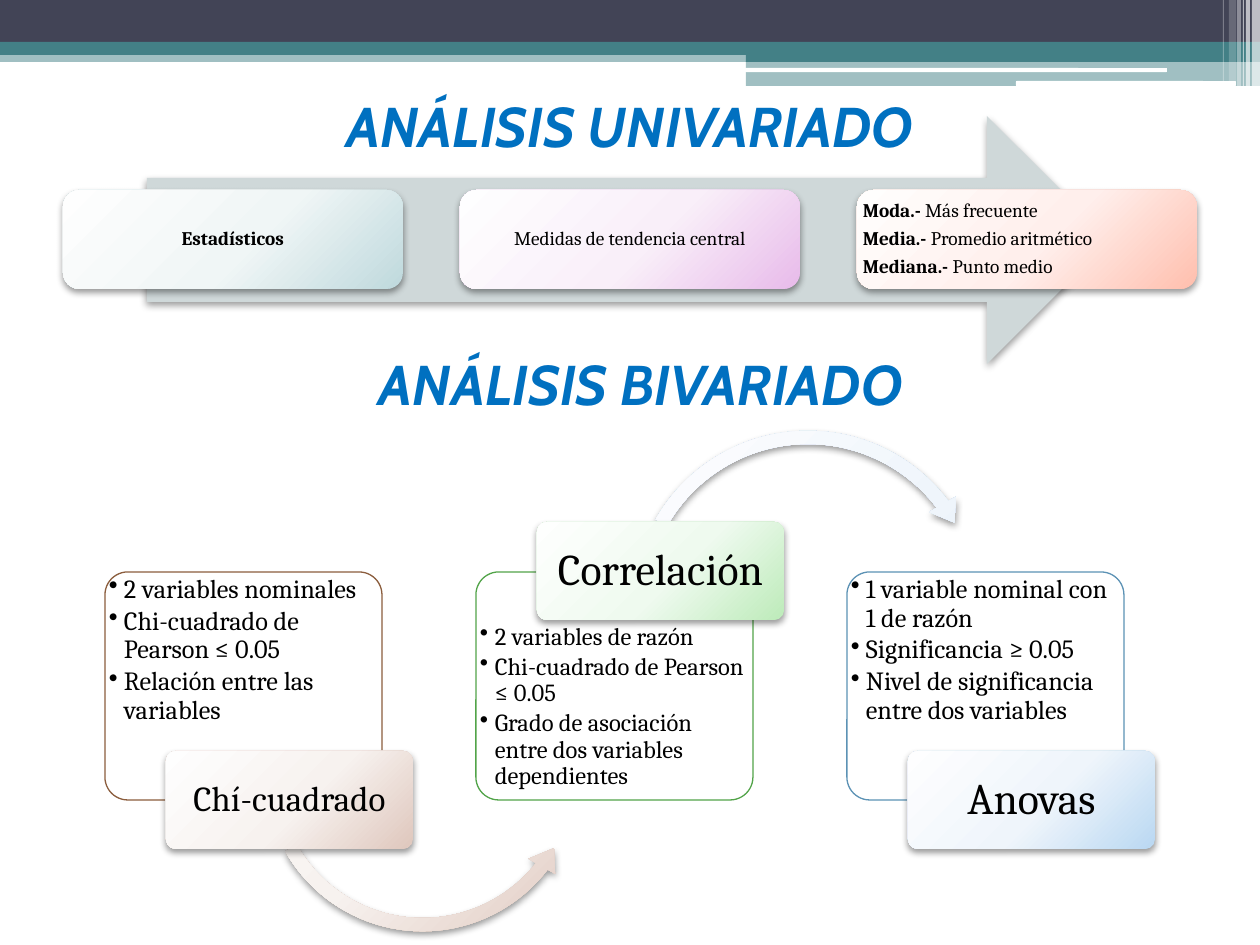
from lxml.etree import SubElement
from pptx import Presentation
from pptx.dml.color import RGBColor
from pptx.enum.shapes import MSO_SHAPE
from pptx.enum.text import MSO_ANCHOR, PP_ALIGN
from pptx.oxml import parse_xml
from pptx.oxml.ns import nsdecls, qn
from pptx.util import Inches, Pt

PX = 7257
HEX = {
    "white": "FFFFFF", "black": "000000", "navy": "424456", "teal": "438086",
    "blue": "0070C0", "grey": "CFD8D9",
    "brown": "8B5D3D", "green": "52A449", "steel": "5C92B5",
}
FADE = {
    "aqua": ("FEFEFE", "F0F6F6", "BFD9DD"),
    "pink": ("FEFEFF", "F9EFF9", "E8BBEA"),
    "coral": ("FFFEFD", "FFEFEC", "FFBFAE"),
    "brown": ("FEFEFE", "F7F2EF", "DFC7BD"),
    "green": ("FEFFFE", "EFFAEF", "BDEBBA"),
    "steel": ("FEFEFF", "EFF5FB", "BAD8F2"),
}


def draw(kind, area, fill, alpha=100, fade=False, shade=False):
    shape = slide.shapes.add_shape(kind, *[v * PX for v in area])
    shape.line.fill.background()
    shape.shadow.inherit = False
    props = shape._element.spPr
    if fade:
        shape.fill.background()
        stops = "".join(
            f'<a:gs pos="{pos}"><a:srgbClr val="{tint}"/></a:gs>'
            for pos, tint in zip((0, 55000, 100000), FADE[fill]))
        props.replace(props.find(qn("a:noFill")), parse_xml(
            f'<a:gradFill {nsdecls("a")} rotWithShape="1"><a:gsLst>{stops}</a:gsLst>'
            '<a:path path="circle"><a:fillToRect l="-40000" t="-90000" '
            'r="140000" b="190000"/></a:path></a:gradFill>'))
    else:
        shape.fill.solid()
        shape.fill.fore_color.rgb = RGBColor.from_string(HEX[fill])
        if alpha < 100:
            tint = props.find(qn("a:solidFill"))[0]
            SubElement(tint, qn("a:alpha"), val=str(alpha * 1000))
    if shade:
        props.find(qn("a:effectLst")).append(parse_xml(
            f'<a:outerShdw {nsdecls("a")} blurRad="52000" dist="25400" '
            'dir="5400000" rotWithShape="0"><a:srgbClr val="000000">'
            '<a:alpha val="40000"/></a:srgbClr></a:outerShdw>'))
    return shape


def write(shape, paras, size, align, after, pad, anchor=MSO_ANCHOR.MIDDLE,
          font="Cambria", ink="black", slant=None, space=0.9):
    frame = shape.text_frame
    frame.word_wrap = True
    frame.vertical_anchor = anchor
    frame.margin_left = frame.margin_right = pad[0] * PX
    frame.margin_top = frame.margin_bottom = pad[1] * PX
    for i, runs in enumerate(paras):
        para = frame.add_paragraph() if i else frame.paragraphs[0]
        para.alignment = align
        para.line_spacing = space
        para.space_before = Pt(0)
        para.space_after = Pt(after)
        for text, bold in runs:
            run = para.add_run()
            run.text = text
            run.font.name = font
            run.font.size = Pt(size)
            run.font.bold = bold
            run.font.italic = slant
            run.font.color.rgb = RGBColor.from_string(HEX[ink])
    return frame


deck = Presentation()
deck.slide_width, deck.slide_height = Inches(10), Inches(7.5)
slide = deck.slides.add_slide(deck.slide_layouts[5])

bands = [
    ((0, 50, 1260, 12), "teal", 50),
    ((0, 0, 1260, 43), "navy", 100),
    ((0, 42, 1260, 13), "teal", 100),
    ((746, 49, 514, 13), "teal", 100),
    ((746, 61, 514, 25), "teal", 50),
]
for area, tint, alpha in bands:
    draw(MSO_SHAPE.RECTANGLE, area, tint, alpha)
for area in ((745, 68, 422, 4), (1016, 81, 220, 5)):
    draw(MSO_SHAPE.ROUNDED_RECTANGLE, area, "white")
stripes = [(1252, 8, 86, 65), (1246, 4, 86, 65), (1243, 1, 86, 60),
           (1237, 4, 86, 40), (1229, 7, 81, 20), (1223, 1, 81, 30)]
for x, w, h, alpha in stripes:
    draw(MSO_SHAPE.RECTANGLE, (x, 0, w, h), "white", alpha)

title = slide.shapes.title
title.left, title.top, title.width, title.height = [
    v * PX for v in (63, 77, 1134, 97)]
lower = slide.shapes.add_textbox(*[v * PX for v in (74, 344, 1134, 128)])
heads = [(title, "ANÁLISIS UNIVARIADO", MSO_ANCHOR.MIDDLE),
         (lower, "ANÁLISIS BIVARIADO", MSO_ANCHOR.TOP)]
for shape, text, anchor in heads:
    write(shape, [[(text, True)]], 32, PP_ALIGN.CENTER, 0, (13, 6), anchor,
          "Cabin", "blue", True, 1.0)

draw(MSO_SHAPE.RIGHT_ARROW, (147, 116, 964, 248), "grey", shade=True)
cards = [
    ("aqua", PP_ALIGN.CENTER, [[("Estadísticos", True)]]),
    ("pink", PP_ALIGN.CENTER, [[("Medidas de tendencia central", False)]]),
    ("coral", PP_ALIGN.JUSTIFY, [
        [("Moda.- ", True), ("Más frecuente", False)],
        [("Media.- ", True), ("Promedio aritmético", False)],
        [("Mediana.- ", True), ("Punto medio", False)],
    ]),
]
for i, (tint, align, paras) in enumerate(cards):
    card = draw(MSO_SHAPE.ROUNDED_RECTANGLE, (63 + 397 * i, 190, 340, 99),
                tint, fade=True, shade=True)
    write(card, paras, 11, align, 4, (1, 1))

left = (MSO_SHAPE.LEFT_CIRCULAR_ARROW, (256, 607, 333, 333),
        (0.04, 4.986, 22.741, 90.245, 0.046))
right = (MSO_SHAPE.CIRCULAR_ARROW, (624, 422, 368, 368),
         (0.036, 4.466, 193.779, 125.755, 0.042))
tests = [
    ("brown", "Chí-cuadrado", 20, 751, 572, 15, left, "brown",
     ["2 variables nominales", "Chi-cuadrado de Pearson ≤ 0.05",
      "Relación entre las variables"]),
    ("green", "Correlación", 25, 522, 620, 14, right, "steel",
     ["2 variables de razón", "Chi-cuadrado de Pearson ≤ 0.05",
      "Grado de asociación entre dos variables dependientes"]),
    ("steel", "Anovas", 25, 751, 572, 15, None, None,
     ["1 variable nominal con 1 de razón", "Significancia ≥ 0.05",
      "Nivel de significancia entre dos variables"]),
]
for i, (tint, name, size, y, top, small, curve, hue, items) in enumerate(tests):
    x = 105 + 371 * i
    panel = draw(MSO_SHAPE.ROUNDED_RECTANGLE, (x, 572, 277, 228), "white", 90)
    panel.adjustments[0] = 0.1
    panel.line.color.rgb = RGBColor.from_string(HEX[tint])
    panel.line.width = Pt(0.75)
    notes = slide.shapes.add_textbox(*[v * PX for v in (x, top, 277, 179)])
    frame = write(notes, [[(item, False)] for item in items], small,
                  PP_ALIGN.LEFT, 2, (4, 4), MSO_ANCHOR.TOP)
    for para in frame.paragraphs:
        props = para._p.get_or_add_pPr()
        props.set("marL", str(15 * PX))
        props.set("indent", str(-15 * PX))
        SubElement(props, qn("a:buChar"), char="•")
    if curve:
        kind, area, bends = curve
        arrow = draw(kind, area, hue, fade=True, shade=True)
        for k, bend in enumerate(bends):
            arrow.adjustments[k] = bend
    label = draw(MSO_SHAPE.ROUNDED_RECTANGLE, (x + 61, y, 247, 98), tint,
                 fade=True, shade=True)
    label.adjustments[0] = 0.1
    write(label, [[(name, False)]], size, PP_ALIGN.CENTER, 0, (3, 1))

deck.save("out.pptx")
